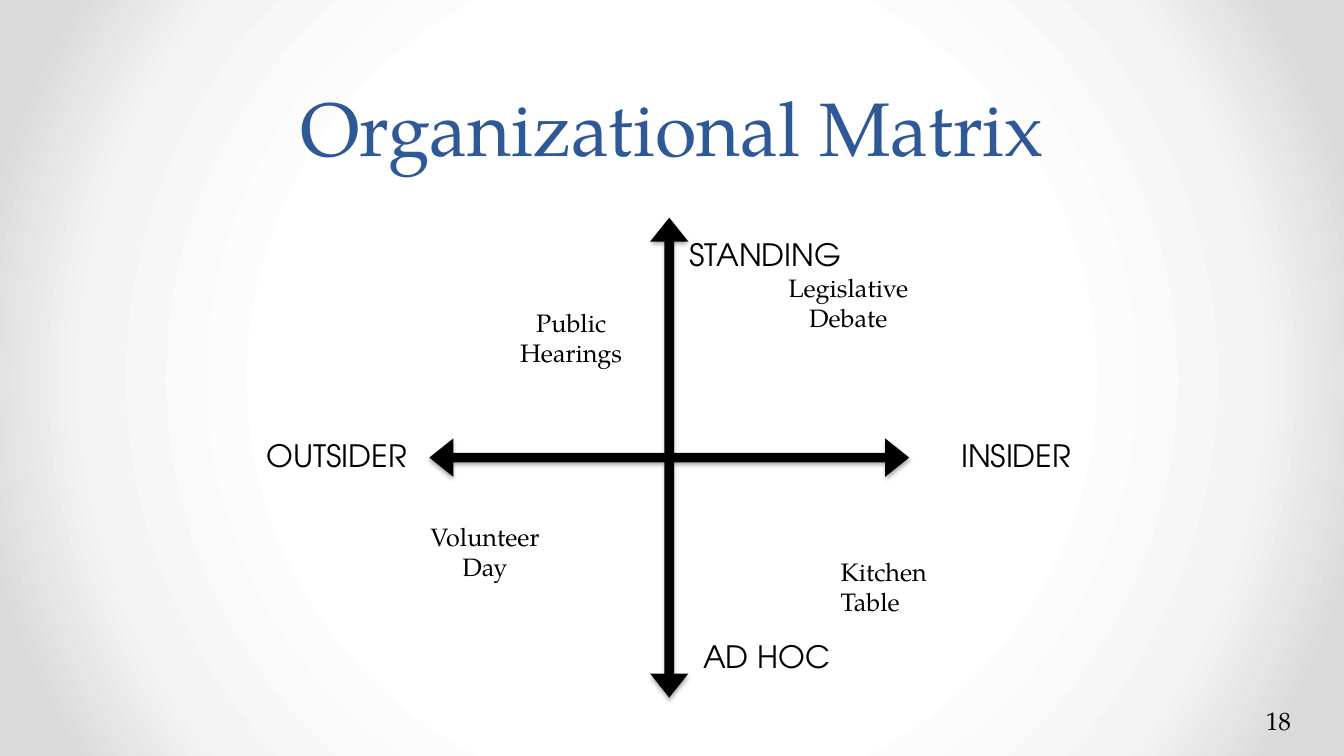
"""Build the Organizational Matrix slide: a four-way arrow with labelled axes and examples."""
import lxml.etree
import pptx
import pptx.dml.color
import pptx.enum.shapes
import pptx.enum.text
import pptx.oxml
import pptx.oxml.ns
import pptx.util

SERIF, SANS = "TeX Gyre Pagella", "TeX Gyre Adventor"
LEFT, CENTER = pptx.enum.text.PP_ALIGN.LEFT, pptx.enum.text.PP_ALIGN.CENTER
ANCHOR = pptx.enum.text.MSO_ANCHOR

prs = pptx.Presentation()
prs.slide_width = pptx.util.Inches(13.333)
prs.slide_height = pptx.util.Inches(7.5)
s = prs.slides.add_slide(prs.slide_layouts[6])


def box(x, y, w, h):
    """Turn percentages of the slide's size into lengths."""
    W, H = prs.slide_width, prs.slide_height
    return [int(share * side / 100) for share, side in ((x, W), (y, H), (w, W), (h, H))]


def add_text(text, place, size, font, color="000000", align=CENTER,
             anchor=ANCHOR.TOP, spacing=1.0):
    """Add one wrapped text box and return its frame."""
    tf = s.shapes.add_textbox(*box(*place)).text_frame
    tf.word_wrap = True
    tf.vertical_anchor = anchor
    tf.text = text
    p = tf.paragraphs[0]
    p.alignment, p.line_spacing = align, spacing
    r = p.runs[0]
    r.font.name, r.font.size = font, pptx.util.Pt(size)
    r.font.color.rgb = pptx.dml.color.RGBColor.from_string(color)
    return tf


s.background.fill.solid()
bg = s._element.xpath(".//p:bgPr")[0]
stops = "".join(f'<a:gs pos="{pos}000"><a:srgbClr val="{color}"/></a:gs>'
                for pos, color in ((50, "FFFFFF"), (76, "F4F4F4"), (92, "DADADA")))
bg.replace(bg[0], pptx.oxml.parse_xml(
    f'<a:gradFill {pptx.oxml.ns.nsdecls("a")} rotWithShape="1"><a:gsLst>{stops}</a:gsLst>'
    '<a:path path="circle"><a:fillToRect l="50000" t="50000" r="50000" b="50000"/></a:path>'
    '</a:gradFill>'))

add_text("Organizational Matrix", (5, 0, 90, 23.33), 54, SERIF, "2F5897",
         anchor=ANCHOR.BOTTOM, spacing=pptx.util.Pt(58))

sp = s.shapes.add_shape(pptx.enum.shapes.MSO_SHAPE.QUAD_ARROW, *box(31.95, 28.8, 35.7, 63.47))
for i, share in enumerate((0.02, 0.04, 0.05)):
    sp.adjustments[i] = share
sp.fill.solid()
sp.fill.fore_color.rgb = pptx.dml.color.RGBColor.from_string("000000")
sp.line.fill.background()
sp.shadow.inherit = False
effects = sp._element.spPr.find(pptx.oxml.ns.qn("a:effectLst"))
shadow = lxml.etree.SubElement(effects, pptx.oxml.ns.qn("a:outerShdw"), blurRad="40000",
                               dist="23000", dir="5400000", rotWithShape="0")
tint = lxml.etree.SubElement(shadow, pptx.oxml.ns.qn("a:srgbClr"), val="000000")
lxml.etree.SubElement(tint, pptx.oxml.ns.qn("a:alpha"), val="35000")

for text, place in (
    ("OUTSIDER", (18.15, 56.53, 13.8, 8)),
    ("STANDING", (50.1, 29.33, 13.73, 9.33)),
    ("INSIDER", (68.7, 56.93, 13.8, 7.2)),
    ("AD HOC", (51.6, 82.4, 10.88, 9.33)),
):
    tf = add_text(text, place, 22, SANS, anchor=ANCHOR.MIDDLE, spacing=0.9)
    tf.margin_left = tf.margin_right = pptx.util.Inches(0.09)
    tf.margin_top = tf.margin_bottom = pptx.util.Inches(0.09)

for text, place, align in (
    ("Legislative Debate", (55.73, 35.33, 14.78, 9.47), CENTER),
    ("Kitchen Table", (61.8, 72.93, 10.58, 9.47), LEFT),
    ("Volunteer Day", (30.83, 68.27, 10.5, 9.47), CENTER),
    ("Public Hearings", (36.08, 40, 12.83, 9.47), CENTER),
    ("18", (93.45, 92.67, 6.15, 5.33), LEFT),
):
    add_text(text, place, 18, SERIF, align=align)

prs.save("out.pptx")
